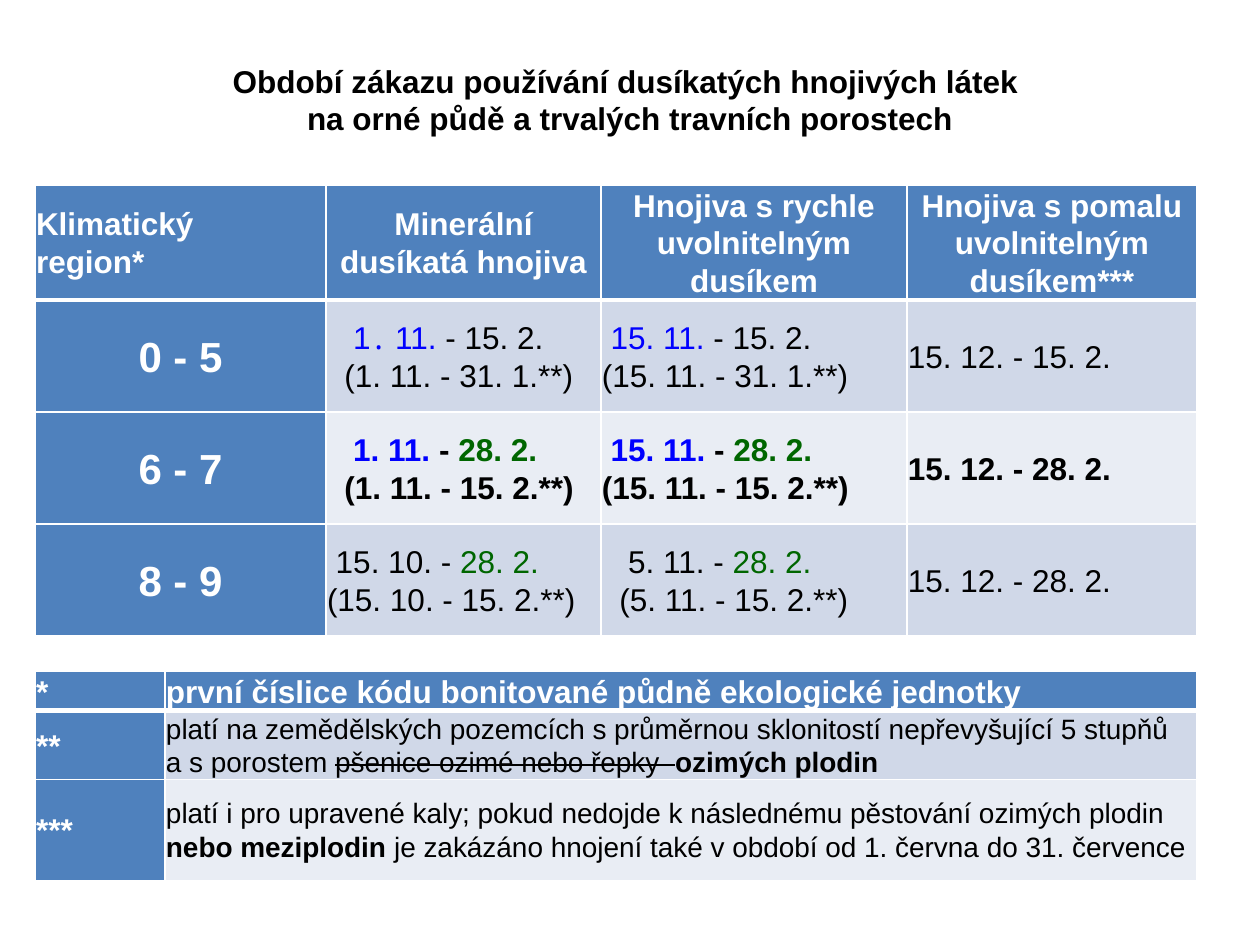
import copy

import lxml.etree
import pptx
import pptx.dml.color
import pptx.enum.text
import pptx.oxml.ns
import pptx.util

SCALE = 914400 / 126
COLORS = {
    "white": "FFFFFF", "black": "000000", "blue": "0000FF", "green": "006600",
    "header": "4F81BD", "odd": "D0D8E8", "even": "E9EDF4",
}
ALIGN = pptx.enum.text.PP_ALIGN
MIDDLE = pptx.enum.text.MSO_ANCHOR.MIDDLE

HEAD = {"color": "white", "bold": True}
REGION = {"color": "white", "bold": True, "size": 24}
PLAIN = {}
BOLD = {"bold": True}
BLUE = {"color": "blue"}
GREEN = {"color": "green"}
BLUE_BOLD = BLUE | BOLD
GREEN_BOLD = GREEN | BOLD
NOTE = {"size": 16}
NOTE_BOLD = NOTE | BOLD
NOTE_STRUCK = NOTE | {"strike": True}

# A cell is a list of (text, format) runs.
PERIODS = [
    [[("Klimatický\nregion*", HEAD)],
     [("Minerální dusíkatá hnojiva", HEAD)],
     [("Hnojiva s rychle uvolnitelným dusíkem", HEAD)],
     [("Hnojiva s pomalu uvolnitelným dusíkem***", HEAD)]],
    [[("0 - 5", REGION)],
     [("   1․ 11.", BLUE), (" - 15. 2. \n  (1. 11. - 31. 1.**)", PLAIN)],
     [(" 15. 11.", BLUE), (" - 15. 2. \n(15. 11. - 31. 1.**)", PLAIN)],
     [("15. 12. - 15. 2.", PLAIN)]],
    [[("6 - 7", REGION)],
     [("   1. 11.", BLUE_BOLD), (" - ", BOLD), ("28. 2. \n", GREEN_BOLD),
      ("  (1. 11. - 15. 2.**)", BOLD)],
     [(" 15. 11.", BLUE_BOLD), (" - ", BOLD), ("28. 2. \n", GREEN_BOLD),
      ("(15. 11. - 15. 2.**)", BOLD)],
     [("15. 12. - 28. 2.", BOLD)]],
    [[("8 - 9", REGION)],
     [(" 15. 10. - ", PLAIN), ("28. 2. \n", GREEN), ("(15. 10. - 15. 2.**)", PLAIN)],
     [("   5. 11. - ", PLAIN), ("28. 2. \n", GREEN), ("  (5. 11. - 15. 2.**)", PLAIN)],
     [("15. 12. - 28. 2.", PLAIN)]],
]
NOTES = [
    [[("*", HEAD)],
     [("první číslice kódu bonitované půdně ekologické jednotky", HEAD)]],
    [[("**", HEAD)],
     [("platí na zemědělských pozemcích s průměrnou sklonitostí nepřevyšující 5 stupňů \n"
       "a s porostem ", NOTE),
      ("pšenice ozimé nebo řepky  ", NOTE_STRUCK), ("ozimých plodin", NOTE_BOLD)]],
    [[("***", HEAD)],
     [("platí i pro upravené kaly; pokud nedojde k následnému pěstování ozimých plodin \n", NOTE),
      ("nebo meziplodin ", NOTE_BOLD),
      ("je zakázáno hnojení také v období od 1. června do 31. července", NOTE)]],
]


def px(n):
    return pptx.util.Emu(round(n * SCALE))


def rgb(name):
    return pptx.dml.color.RGBColor.from_string(COLORS[name])


def add_run(p, text, size=18, color="black", bold=False, strike=False):
    r = p.add_run()
    r.text = text
    for name, value in {"name": "Arial", "size": pptx.util.Pt(size), "bold": bold}.items():
        setattr(r.font, name, value)
    r.font.color.rgb = rgb(color)
    if strike:
        r._r.get_or_add_rPr().set("strike", "sngStrike")
    return r


def add_text(p, text, fmt):
    """Add a run, with each newline as a line break of the same size."""
    first, *rest = text.split("\n")
    r = add_run(p, first, **fmt)
    for line in rest:
        p.add_line_break()
        p._p.findall(pptx.oxml.ns.qn("a:br"))[-1].append(copy.deepcopy(r._r.rPr))
        if line:
            add_run(p, line, **fmt)


def add_border(cell, side, width):
    qn = pptx.oxml.ns.qn
    tcPr = cell._tc.get_or_add_tcPr()
    ln = lxml.etree.SubElement(tcPr, qn(f"a:ln{side}"), w=str(pptx.util.Pt(width)))
    fill = lxml.etree.SubElement(ln, qn("a:solidFill"))
    lxml.etree.SubElement(fill, qn("a:srgbClr"), val=COLORS["white"])


def fill_cell(cell, runs, row, col):
    for side in "LRTB":
        thick = (row, side) in ((0, "B"), (1, "T"))
        add_border(cell, side, 3 if thick else 1)
    cell.fill.solid()
    band = "odd" if row % 2 else "even"
    cell.fill.fore_color.rgb = rgb("header" if row == 0 or col == 0 else band)
    cell.vertical_anchor = MIDDLE
    for side in ("left", "right", "top", "bottom"):
        setattr(cell, f"margin_{side}", px(1))
    p = cell.text_frame.paragraphs[0]
    p.line_spacing = 1.07
    for text, fmt in runs:
        add_text(p, text, fmt)
    return p


def add_table(s, left, top, widths, heights, rows):
    frame = s.shapes.add_table(len(rows), len(widths), px(left), px(top),
                               px(sum(widths)), px(sum(heights)))
    table = frame.table
    for column, width in zip(table.columns, widths):
        column.width = px(width)
    for row, height in zip(table.rows, heights):
        row.height = px(height)
    for i, row in enumerate(rows):
        for j, runs in enumerate(row):
            p = fill_cell(table.cell(i, j), runs, i, j)
            header = i == 0 and j > 0 and len(widths) > 2
            if header or runs[0][1] is REGION:
                p.alignment = ALIGN.CENTER


def add_title(s, lines):
    tf = s.shapes.add_textbox(0, px(55), px(1260), px(89)).text_frame
    tf.word_wrap = True
    tf.vertical_anchor = MIDDLE
    for i, line in enumerate(lines):
        p = tf.add_paragraph() if i else tf.paragraphs[0]
        p.alignment = ALIGN.CENTER
        add_run(p, line, bold=True)


def main():
    prs = pptx.Presentation()
    prs.slide_width, prs.slide_height = px(1260), px(945)
    s = prs.slides.add_slide(prs.slide_layouts[6])
    add_table(s, 35, 185, [291, 275, 306, 290], [112] * 4, PERIODS)
    add_table(s, 35, 671, [130, 1032], [35, 68, 101], NOTES)
    add_title(s, ["Období zákazu používání dusíkatých hnojivých látek ",
                  "na orné půdě a trvalých travních porostech"])
    prs.save("out.pptx")


if __name__ == "__main__":
    main()
